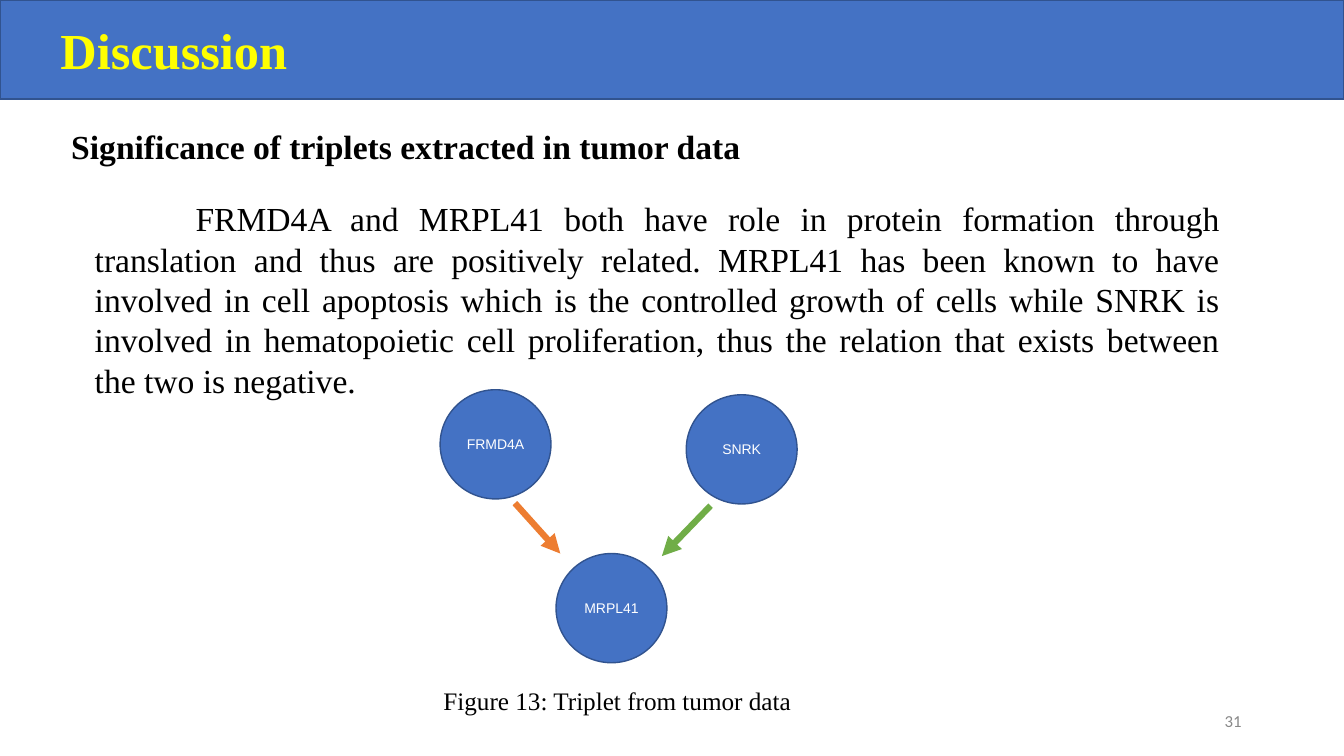
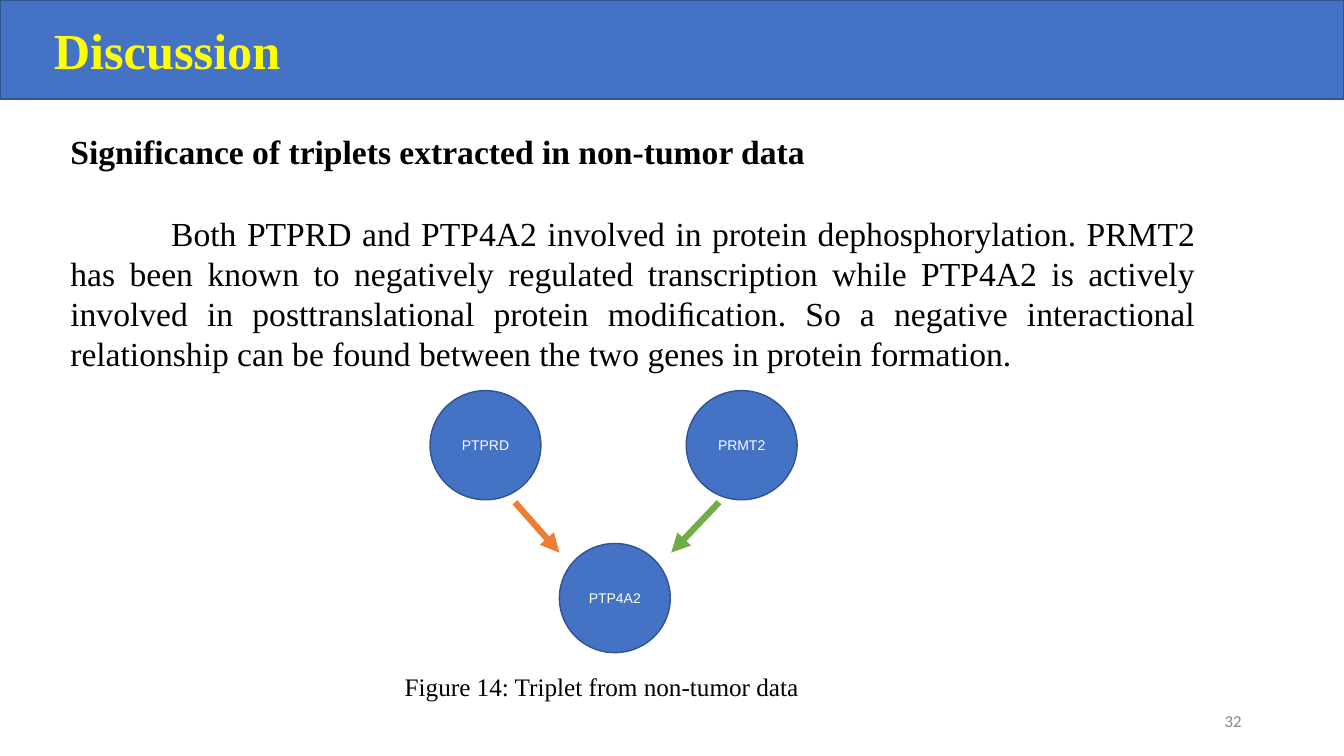
from lxml import etree
from pptx import Presentation
from pptx.dml.color import RGBColor
from pptx.enum.shapes import MSO_CONNECTOR, MSO_SHAPE
from pptx.enum.text import MSO_ANCHOR, PP_ALIGN
from pptx.oxml.ns import qn
from pptx.util import Emu, Inches, Pt

RECT, OVAL = MSO_SHAPE.RECTANGLE, MSO_SHAPE.OVAL
LINE = MSO_CONNECTOR.STRAIGHT
TOP, MID = MSO_ANCHOR.TOP, MSO_ANCHOR.MIDDLE
LEFT, CENTER, RIGHT, FULL = PP_ALIGN.LEFT, PP_ALIGN.CENTER, PP_ALIGN.RIGHT, PP_ALIGN.JUSTIFY
COLS, ROWS = 160, 90
SERIF = "Times New Roman"
HUE = {
    "blue": "4472C4", "edge": "31538F", "title": "FFFF00", "ink": "000000",
    "white": "FFFFFF", "gray": "888888", "orange": "ED7D31", "green": "70AD47",
}

deck = Presentation()
deck.slide_width, deck.slide_height = Inches(13.3333), Inches(7.5)


def place(*cells):
    sides = (deck.slide_width / COLS, deck.slide_height / ROWS)
    return [Emu(round(cell * sides[i % 2])) for i, cell in enumerate(cells)]


def write(slide, text, box, form=None, size=24, font=SERIF, hue="ink", bold=False,
          align=LEFT, anchor=TOP, inset=1.2, indent=0):
    if form is None:
        shape = slide.shapes.add_textbox(*place(*box))
    else:
        shape = slide.shapes.add_shape(form, *place(*box))
        shape.shadow.inherit = False
        shape.fill.solid()
        shape.fill.fore_color.rgb = RGBColor.from_string(HUE["blue"])
        shape.line.color.rgb = RGBColor.from_string(HUE["edge"])
        shape.line.width = Pt(1)
    frame = shape.text_frame
    frame.word_wrap = True
    frame.vertical_anchor = anchor
    frame.margin_left = place(inset)[0]
    para = frame.paragraphs[0]
    para.alignment = align
    if indent:
        para._p.get_or_add_pPr().set("indent", str(place(indent)[0]))
    run = para.add_run()
    run.text = text
    run.font.name, run.font.size, run.font.bold = font, Pt(size), bold
    run.font.color.rgb = RGBColor.from_string(HUE[hue])


pages = [
    {
        "num": "31", "inset": 7.2,
        "head": ("Significance of triplets extracted in tumor data", 7.3, 14.4),
        "body": ("FRMD4A and MRPL41 both have role in protein formation through "
                 "translation and thus are positively related. MRPL41 has been known "
                 "to have involved in cell apoptosis which is the controlled growth of "
                 "cells while SNRK is involved in hematopoietic cell proliferation, "
                 "thus the relation that exists between the two is negative.", 10.1, 23),
        "genes": [("FRMD4A", 52.4, 46.4), ("MRPL41", 66.2, 65.9), ("SNRK", 81.7, 47)],
        "links": [("orange", 61.3, 59.9, 66.7, 65.9), ("green", 84.6, 60.2, 78.8, 66.2)],
        "note": ("Figure 13: Triplet from tumor data", 51.6, 81),
    },
    {
        "num": "32", "inset": 6.4,
        "head": ("Significance of triplets extracted in non-tumor data", 7.2, 15),
        "body": ("Both PTPRD and PTP4A2 involved in protein dephosphorylation. PRMT2 "
                 "has been known to negatively regulated transcription while PTP4A2 is "
                 "actively involved in posttranslational protein modiﬁcation. So a "
                 "negative interactional relationship can be found between the two "
                 "genes in protein formation.", 7.2, 24.7),
        "genes": [("PTPRD", 51.2, 46.5), ("PTP4A2", 66.6, 64.7), ("PRMT2", 81.7, 46.5)],
        "links": [("orange", 61.3, 59.8, 66.6, 65.8), ("green", 85.6, 59.8, 79.9, 65.8)],
        "note": ("Figure 14: Triplet from non-tumor data", 47, 79.3),
    },
]

for page in pages:
    slide = deck.slides.add_slide(deck.slide_layouts[6])
    write(slide, "Discussion", (0, 0, COLS, 11.8), form=RECT, size=36, hue="title",
          bold=True, anchor=MID, inset=page["inset"])
    write(slide, page["num"], (113, 83.4, 36, 4.8), size=12, font="Calibri",
          hue="gray", align=RIGHT, anchor=MID)
    text, x, y = page["head"]
    write(slide, text, (x, y, 145.4, 6), bold=True)
    text, x, y = page["body"]
    write(slide, text, (x, y, 136.3, 25.4), align=FULL, indent=12)
    for gene, x, y in page["genes"]:
        write(slide, gene, (x, y, 13.2, 13), form=OVAL, size=10, font="Arial",
              hue="white", align=CENTER, anchor=MID)
    for hue, *ends in page["links"]:
        link = slide.shapes.add_connector(LINE, *place(*ends))
        link.line.color.rgb = RGBColor.from_string(HUE[hue])
        link.line.width = Pt(4.5)
        etree.SubElement(link.line._get_or_add_ln(), qn("a:tailEnd"), type="triangle")
        etree.SubElement(link._element.spPr, qn("a:effectLst"))
    text, x, y = page["note"]
    write(slide, text, (x, y, 80, 4.8), size=18)

deck.save("out.pptx")
